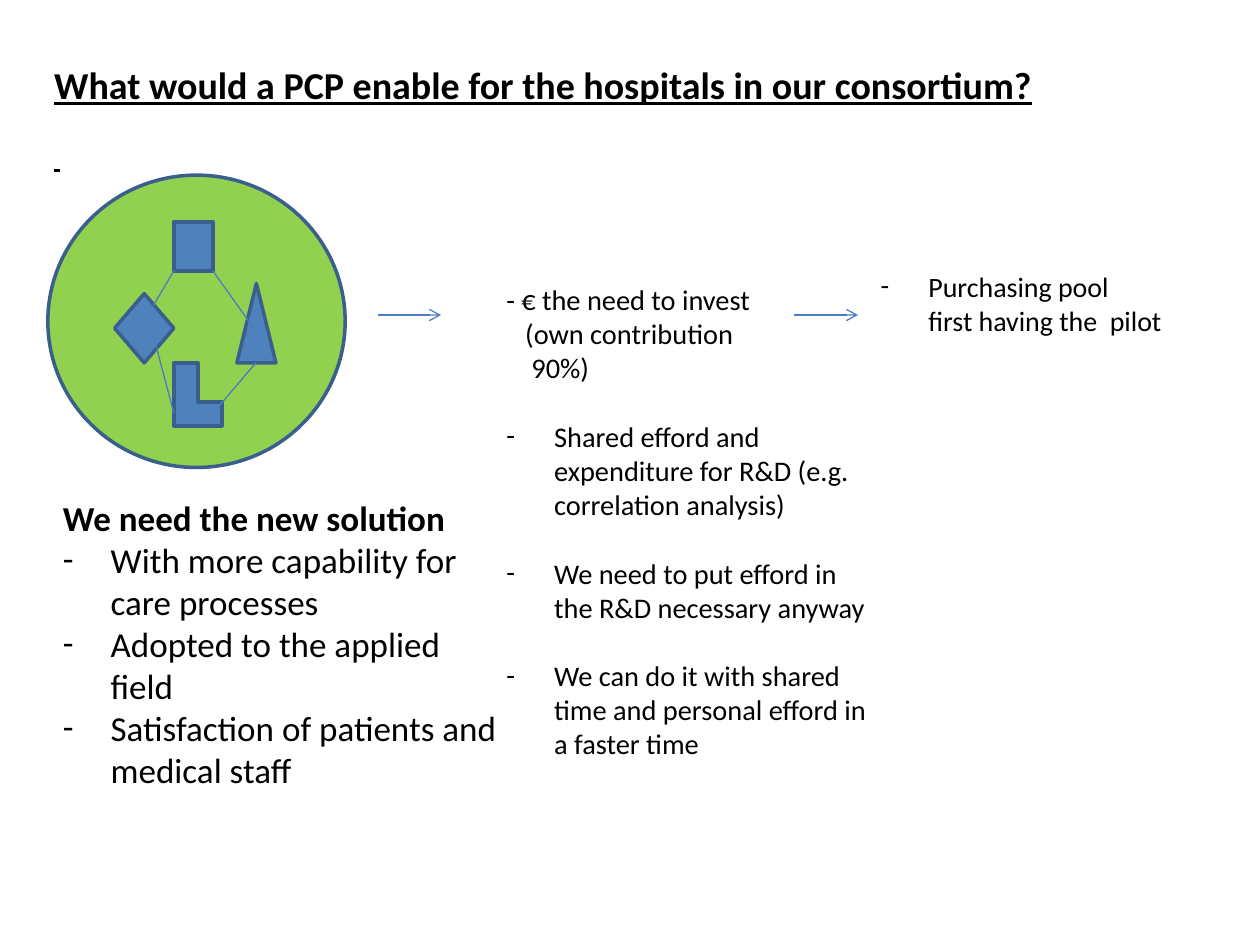
"""Build the slide on what a PCP enables for the hospitals in the consortium."""
from dataclasses import dataclass

from lxml import etree
from pptx import Presentation
from pptx import util as u
from pptx.dml.color import RGBColor
from pptx.enum import shapes, text
from pptx.oxml import ns

FONT = "Calibri"
INK, GREEN, BLUE, NAVY, LINK = "000000", "92D050", "4F81BD", "3A5F8C", "4B7EBC"
HANG = 0.38


@dataclass
class Symbol:
    kind: shapes.MSO_SHAPE
    box: tuple[float, float, float, float]
    fill: str = BLUE


@dataclass
class Link:
    start: tuple[float, float]
    end: tuple[float, float]
    arrow: bool = False


@dataclass
class Para:
    words: str
    bullet: bool = False
    bold: bool = False
    underline: bool = False
    left: float = 0
    before: float = 0
    size: float | None = None


@dataclass
class Block:
    box: tuple[float, float, float, float]
    size: float
    paras: list[Para]


SYMBOLS = [
    Symbol(shapes.MSO_SHAPE.OVAL, (0.38, 1.39, 2.36, 2.32), GREEN),
    Symbol(shapes.MSO_SHAPE.RECTANGLE, (1.38, 1.76, 0.31, 0.39)),
    Symbol(shapes.MSO_SHAPE.ISOSCELES_TRIANGLE, (1.88, 2.25, 0.31, 0.63)),
    Symbol(shapes.MSO_SHAPE.DIAMOND, (0.91, 2.33, 0.47, 0.55)),
    Symbol(shapes.MSO_SHAPE.CORNER, (1.38, 2.88, 0.38, 0.5)),
]
LINKS = [
    Link((1.69, 2.15), (2.06, 2.67)),
    Link((1.38, 2.15), (1.22, 2.42)),
    Link((1.19, 2.56), (1.38, 3.28)),
    Link((2.03, 2.88), (1.69, 3.28)),
    Link((3, 2.5), (3.5, 2.5), arrow=True),
    Link((6.3, 2.5), (6.81, 2.5), arrow=True),
]
HEADING = Block((0.33, 0.44, 8.19, 0.83), 21.7, [
    Para("What would a PCP enable for the hospitals in our consortium?",
         bold=True, underline=True),
    Para(" ", underline=True, before=19, size=15.5),
])
GAP = 19.8
BLOCKS = [
    Block((3.92, 2.19, 3.13, 3.88), 16.2, [
        Para("- € the need to invest"),
        Para("(own contribution", left=0.15),
        Para("90%)", left=0.2),
        Para("Shared efford and expenditure for R&D (e.g. correlation analysis)",
             bullet=True, before=GAP),
        Para("We need to put efford in the R&D necessary anyway",
             bullet=True, before=GAP),
        Para("We can do it with shared time and personal efford in a faster time",
             bullet=True, before=GAP),
    ]),
    Block((0.4, 3.89, 3.66, 3.33), 20, [
        Para("We need the new solution", bold=True),
        Para("With more capability for care processes", bullet=True),
        Para("Adopted to the applied field", bullet=True),
        Para("Satisfaction of patients and medical staff", bullet=True),
    ]),
    Block((6.89, 2.09, 2.99, 1.04), 16, [
        Para("Purchasing pool\nfirst having the  pilot", bullet=True),
    ]),
]


def rgb(value: str) -> RGBColor:
    """Turn a hex string into a colour."""
    return RGBColor.from_string(value)


def inches(values: tuple[float, ...]) -> list[u.Length]:
    """Turn numbers into lengths."""
    return [u.Inches(value) for value in values]


def draw_symbol(slide, symbol: Symbol) -> None:
    """Draw one filled and outlined symbol."""
    shape = slide.shapes.add_shape(symbol.kind, *inches(symbol.box))
    shape.shadow.inherit = False
    shape.fill.solid()
    shape.fill.fore_color.rgb = rgb(symbol.fill)
    shape.line.color.rgb = rgb(NAVY)
    shape.line.width = u.Pt(2)


def draw_link(slide, link: Link) -> None:
    """Draw one thin line, with an open arrowhead if asked."""
    line = slide.shapes.add_connector(
        shapes.MSO_CONNECTOR.STRAIGHT, *inches(link.start + link.end))
    line.line.color.rgb = rgb(LINK)
    line.line.width = u.Pt(0.75)
    props = line._element.spPr
    if link.arrow:
        etree.SubElement(props.find(ns.qn("a:ln")), ns.qn("a:tailEnd"), type="arrow")
    etree.SubElement(props, ns.qn("a:effectLst"))


def write_para(paragraph, para: Para, size: float) -> None:
    """Write one paragraph run by run."""
    paragraph.alignment = text.PP_ALIGN.LEFT
    paragraph.space_before = u.Pt(para.before)
    props = paragraph._p.get_or_add_pPr()
    props.set("marL", str(u.Inches(HANG if para.bullet else para.left)))
    props.set("indent", str(u.Inches(-HANG if para.bullet else 0)))
    if para.bullet:
        etree.SubElement(props, ns.qn("a:buFont"), typeface=FONT)
        etree.SubElement(props, ns.qn("a:buChar"), char="-")
    for number, words in enumerate(para.words.split("\n")):
        if number:
            paragraph.add_line_break()
        run = paragraph.add_run()
        run.text = words
        run.font.name = FONT
        run.font.size = u.Pt(para.size or size)
        run.font.bold = para.bold
        run.font.underline = para.underline
        run.font.color.rgb = rgb(INK)


def write_block(holder, block: Block) -> None:
    """Place a text holder and fill it with paragraphs."""
    holder.left, holder.top, holder.width, holder.height = inches(block.box)
    frame = holder.text_frame
    frame.word_wrap = True
    frame.auto_size = text.MSO_AUTO_SIZE.NONE
    frame.vertical_anchor = text.MSO_ANCHOR.TOP
    for number, para in enumerate(block.paras):
        paragraph = frame.add_paragraph() if number else frame.paragraphs[0]
        write_para(paragraph, para, block.size)


def main() -> None:
    """Build and save the slide."""
    deck = Presentation()
    deck.slide_width, deck.slide_height = inches((10, 7.5))
    slide = deck.slides.add_slide(deck.slide_layouts[5])
    write_block(slide.shapes.title, HEADING)
    for symbol in SYMBOLS:
        draw_symbol(slide, symbol)
    for link in LINKS:
        draw_link(slide, link)
    for block in BLOCKS:
        write_block(slide.shapes.add_textbox(*inches(block.box)), block)
    deck.save("out.pptx")


if __name__ == "__main__":
    main()
